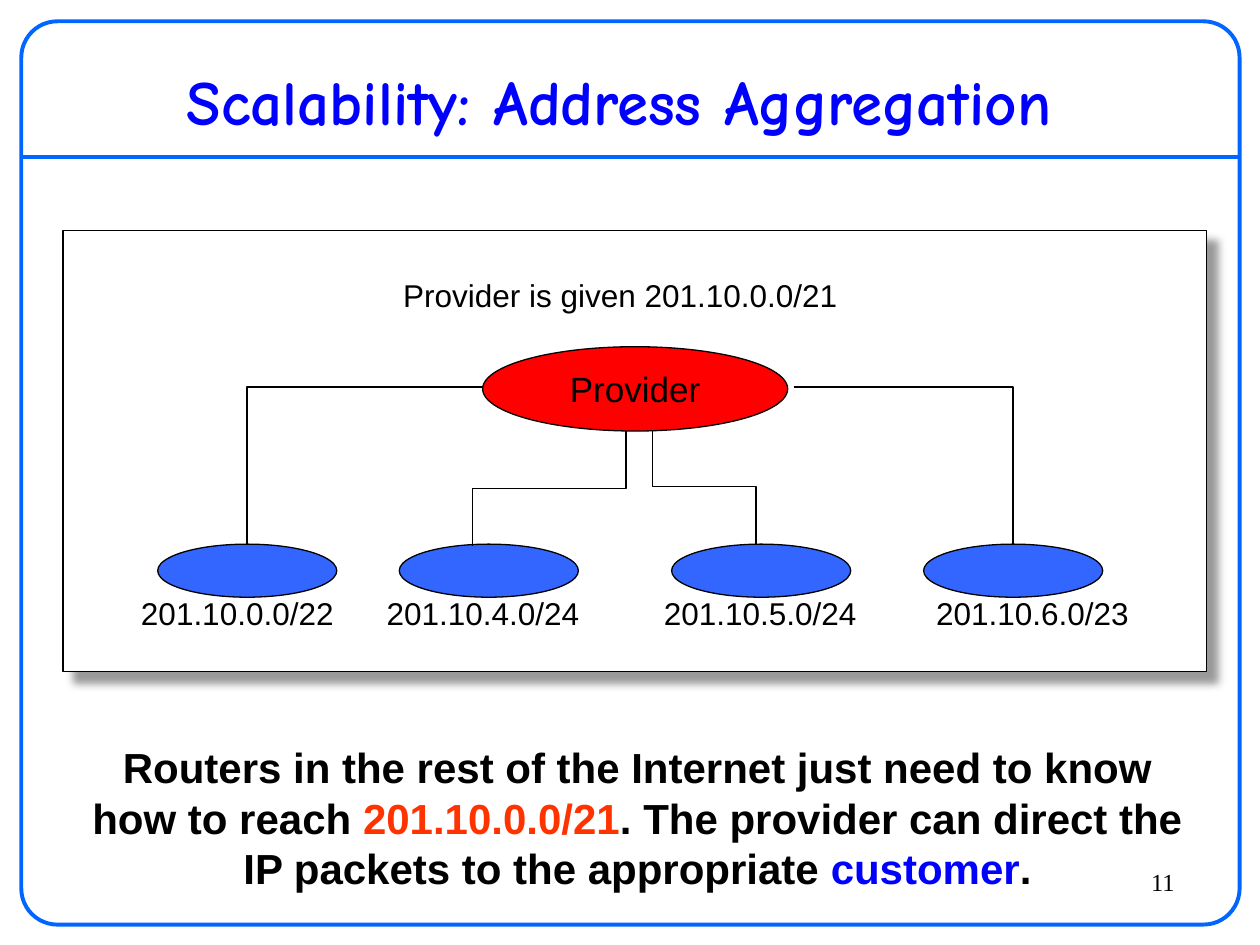
import pptx
import pptx.util
import pptx.dml.color
import pptx.enum.shapes
import pptx.enum.text
import pptx.oxml
import pptx.oxml.ns
import lxml.etree

Cm, Pt = pptx.util.Cm, pptx.util.Pt
SHAPE = pptx.enum.shapes.MSO_SHAPE
CONNECTOR = pptx.enum.shapes.MSO_CONNECTOR
ALIGN = pptx.enum.text.PP_ALIGN
ANCHOR = pptx.enum.text.MSO_ANCHOR
qn = pptx.oxml.ns.qn

CUSTOMERS = [
    ("201.10.0.0/22", 1.91, 1.32),
    ("201.10.4.0/24", 6.78, 6.27),
    ("201.10.5.0/24", 12.27, 11.86),
    ("201.10.6.0/23", 17.35, 17.35),
]


def rgb(color):
    """Turn a hex string into a colour."""
    return pptx.dml.color.RGBColor.from_string(color)


def style_run(r, size, color="000000", font="Arial", bold=False):
    """Set the font of a run."""
    r.font.size, r.font.name, r.font.bold = Pt(size), font, bold
    r.font.color.rgb = rgb(color)


def within(box, x, y, w, h):
    """Return slide lengths for a frame given in cm relative to a box."""
    return Cm(box[0] + x), Cm(box[1] + y), Cm(w), Cm(h)


def add_shape(s, kind, frame, fill=None, line="000000", width=0.75):
    """Add a preset shape with a plain fill and outline."""
    sp = s.shapes.add_shape(kind, *frame)
    sp.shadow.inherit = False
    if fill:
        sp.fill.solid()
        sp.fill.fore_color.rgb = rgb(fill)
    else:
        sp.fill.background()
    sp.line.color.rgb, sp.line.width = rgb(line), Pt(width)
    return sp


def add_text(s, frame, parts, size, wrap=False, align=ALIGN.CENTER, **style):
    """Add a text box with one paragraph of (text, colour) parts."""
    tf = s.shapes.add_textbox(*frame).text_frame
    tf.word_wrap = wrap
    p = tf.paragraphs[0]
    p.alignment = align
    for text, color in parts:
        r = p.add_run()
        r.text = text
        style_run(r, size, color, **style)


def add_connector(s, kind, start, end, color="000000", width=0.75):
    """Add a connector without a shadow between two points."""
    cn = s.shapes.add_connector(kind, *start, *end)
    cn.line.color.rgb, cn.line.width = rgb(color), Pt(width)
    lxml.etree.SubElement(cn._element.spPr, qn("a:effectLst"))
    return cn


def add_corner(s, box, x1, y1, x2, y2):
    """Add a one-bend connector that runs sideways and then down."""
    cn = add_connector(s, CONNECTOR.ELBOW, within(box, x1, y1, 0, 0)[:2],
                       within(box, x2, y2, 0, 0)[:2])
    cn._element.spPr.find(qn("a:prstGeom")).set("prst", "bentConnector2")


def add_step(s, box, x1, y1, x2, y2):
    """Add a two-bend connector that runs down, sideways and down."""
    cx, cy = (x1 + x2) / 2, (y1 + y2) / 2
    half_w, half_h = (y2 - y1) / 2, abs(x2 - x1) / 2
    rightward = x2 > x1
    if rightward:
        half_w = -half_w
    cn = add_connector(s, CONNECTOR.ELBOW,
                       within(box, cx - half_w, cy - half_h, 0, 0)[:2],
                       within(box, cx + half_w, cy + half_h, 0, 0)[:2])
    angle = 270 if rightward else 90
    cn._element.spPr.find(qn("a:xfrm")).set("rot", str(angle * 60000))


def add_shadow(sp):
    """Give a shape a soft grey shadow to the lower right."""
    effects = sp._element.spPr.find(qn("a:effectLst"))
    shadow = lxml.etree.SubElement(
        effects, qn("a:outerShdw"), blurRad=str(Pt(5)), dist=str(Pt(8.5)),
        dir=str(45 * 60000), algn="ctr", rotWithShape="0")
    color = lxml.etree.SubElement(shadow, qn("a:srgbClr"), val="777777")
    lxml.etree.SubElement(color, qn("a:alpha"), val="75000")


def add_frame(s, box):
    """Draw the rounded slide border and the rule under the title."""
    x, y, w, h = box
    add_connector(s, CONNECTOR.STRAIGHT, (Cm(x), Cm(y + 2.74)),
                  (Cm(x + w), Cm(y + 2.74)), "0066FF", 2.25)
    sp = add_shape(s, SHAPE.ROUNDED_RECTANGLE, within(box, 0, 0, w, h),
                   line="0066FF", width=2.25)
    sp.adjustments[0] = 0.04


def set_title(s, box, text):
    """Place and format the title placeholder."""
    sp = s.shapes.title
    sp.left, sp.top, sp.width, sp.height = within(box, 0, 0, *box[2:])
    tf = sp.text_frame
    tf.text = text
    tf.auto_size = pptx.enum.text.MSO_AUTO_SIZE.NONE
    tf.vertical_anchor = ANCHOR.MIDDLE
    p = tf.paragraphs[0]
    p.alignment = ALIGN.CENTER
    style_run(p.runs[0], 36, "0000FF", "Comic Neue", True)


def add_network(s, box):
    """Draw the provider, its customers and their address blocks."""
    add_shadow(add_shape(s, SHAPE.RECTANGLE, within(box, 0, 0, *box[2:]), "FFFFFF"))
    add_text(s, within(box, 6.6, 0.79, 9.27, 1.02),
             [("Provider is given 201.10.0.0/21", "000000")], 18)
    for address, oval_x, label_x in CUSTOMERS:
        add_shape(s, SHAPE.OVAL, within(box, oval_x, 6.32, 3.61, 1.07), "3366FF")
        add_text(s, within(box, label_x, 7.21, 4.39, 1.02),
                 [(address, "000000")], 18)
    add_corner(s, box, 8.61, 3.15, 3.71, 6.32)
    add_step(s, box, 11.35, 4.04, 8.25, 6.35)
    add_step(s, box, 11.89, 4, 13.97, 6.32)
    add_corner(s, box, 14.73, 3.15, 19.15, 6.32)
    sp = add_shape(s, SHAPE.OVAL, within(box, 8.46, 2.34, 6.15, 1.7), "FF0000")
    tf = sp.text_frame
    tf.text = "Provider"
    tf.word_wrap = False
    tf.vertical_anchor = ANCHOR.MIDDLE
    p = tf.paragraphs[0]
    p.alignment = ALIGN.CENTER
    style_run(p.runs[0], 20)


def add_conclusion(s, box):
    """Write the closing statement."""
    add_text(s, within(box, 0, 0, *box[2:]), [
        ("Routers in the rest of the Internet just need to know how to reach ", "000000"),
        ("201.10.0.0/21", "FF3300"),
        (". The provider can direct the IP packets to the appropriate ", "000000"),
        ("customer", "0000FF"),
        (".", "000000"),
    ], 24, wrap=True, bold=True)


def add_page_number(s, box, number):
    """Write the page number."""
    add_text(s, within(box, 0, 0, *box[2:]), [(number, "000000")], 14,
             wrap=True, align=ALIGN.RIGHT, font="Times New Roman")


def main():
    """Build and save the slide."""
    prs = pptx.Presentation()
    prs.slide_width, prs.slide_height = Cm(25.4), Cm(19.05)
    s = prs.slides.add_slide(prs.slide_layouts[5])
    add_frame(s, (0.43, 0.43, 24.56, 18.21))
    set_title(s, (0.84, 1.07, 23.29, 1.9), "Scalability: Address Aggregation")
    add_page_number(s, (21.39, 17.35, 2.54, 1.07), "11")
    add_network(s, (1.27, 4.65, 23.06, 8.89))
    add_conclusion(s, (1.6, 14.83, 22.5, 3.3))
    prs.save("out.pptx")


if __name__ == "__main__":
    main()
